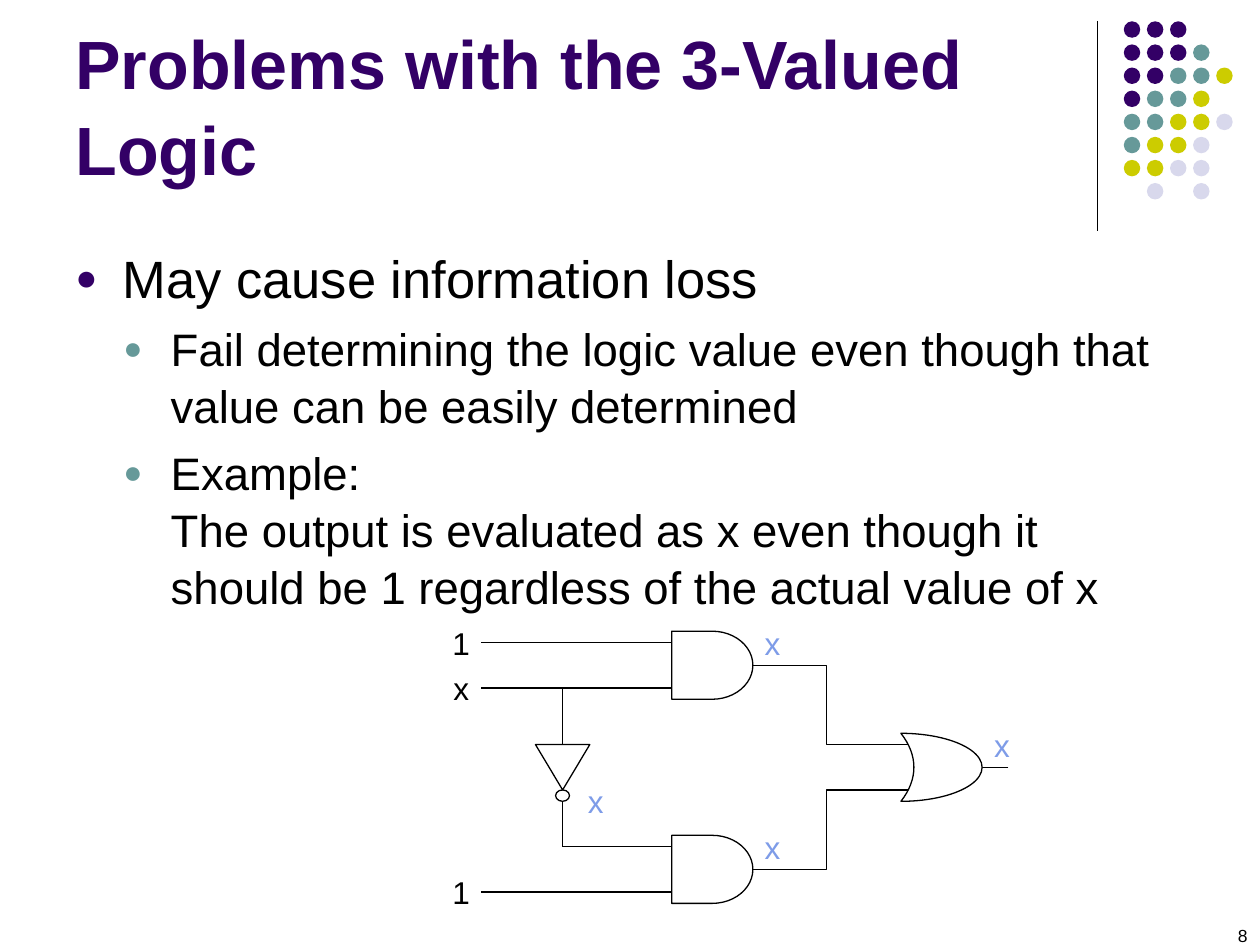
from lxml import etree
from pptx import Presentation
from pptx.dml.color import RGBColor
from pptx.enum import shapes, text
from pptx.oxml import ns
from pptx.util import Pt

deck = Presentation()
deck.slide_width, deck.slide_height = Pt(720), Pt(540)
slide = deck.slides.add_slide(deck.slide_layouts[6])
tree = slide.shapes
kinds = shapes.MSO_SHAPE
links = shapes.MSO_CONNECTOR
INK, PLUM, TEAL, BLUE = "000000", "330066", "669999", "7E9CE8"
hue = RGBColor.from_string


def wire(x1, y1, x2, y2, kind=links.STRAIGHT):
    line = tree.add_connector(kind, Pt(x1), Pt(y1), Pt(x2), Pt(y2))
    line.line.color.rgb = hue(INK)
    line.line.width = Pt(0.75)
    etree.SubElement(line._element.spPr, ns.qn("a:effectLst"))


def solid(kind, x, y, w, h, fill, edge=None, turn=0):
    item = tree.add_shape(kind, Pt(x), Pt(y), Pt(w), Pt(h))
    item.shadow.inherit = False
    item.fill.solid()
    item.fill.fore_color.rgb = hue(fill)
    item.rotation = turn
    if edge:
        item.line.color.rgb = hue(edge)
        item.line.width = Pt(0.75)
    else:
        item.line.fill.background()
    return item


wire(627, 12, 627, 132)
tints = {"P": PLUM, "T": TEAL, "Y": "CCCC00", "L": "D8D8EC"}
dots = ["PPP", "PPPT", "PPTTY", "PTTY", "TTYYL", "TYYL", "YYLL", " L L"]
for row, marks in enumerate(dots):
    for col, mark in enumerate(marks):
        if mark in tints:
            solid(kinds.OVAL, 642.2 + 13.2 * col, 12.2 + 13.2 * row, 9.4, 9.4, tints[mark])

TOP, MID, LOW = text.MSO_ANCHOR.TOP, text.MSO_ANCHOR.MIDDLE, text.MSO_ANCHOR.BOTTOM
LEFT, HUB, RIGHT = text.PP_ALIGN.LEFT, text.PP_ALIGN.CENTER, text.PP_ALIGN.RIGHT
BASE, STEP = 367.2, 12.96
points = [
    ("May cause information loss", 30, PLUM, 27, 0),
    ("Fail determining the logic value even though that value can be easily determined", 26, TEAL, 54.5, 5.2),
    ("Example:\vThe output is evaluated as x even though it should be 1 regardless of the actual value of x",
     26, TEAL, 54.5, 5.2),
]
blocks = [
    ("8", 552, 525, 168, 15, 10, INK, RIGHT, TOP),
    ("Problems with the 3-Valued Logic", 36, 9.4, 594, 102.2, 39, PLUM, LEFT, LOW),
    ("\n".join(p[0] for p in points), 36, 135.4, 648, 347, 30, INK, LEFT, TOP),
]
tags = [("1", 252, -1, INK), ("x", 252, 1, INK), ("1", 252, 10, INK), ("x", 329, 6, BLUE),
        ("x", 430, 8, BLUE), ("x", 561, 3.5, BLUE), ("x", 430, -1, BLUE)]
blocks += [(tag, x, BASE + row * STEP, 23, 2 * STEP, 18, tint, HUB, MID) for tag, x, row, tint in tags]

frames = []
for words, x, y, w, h, size, tint, side, hold in blocks:
    frame = tree.add_textbox(Pt(x), Pt(y), Pt(w), Pt(h)).text_frame
    frame.text = words
    frame.word_wrap = hold != MID
    frame.vertical_anchor = hold
    if hold == MID:
        frame.margin_left = frame.margin_right = 0
    for para in frame.paragraphs:
        para.alignment = side
        if size >= 30:
            para.line_spacing = 1.05
        for run in para.runs:
            run.font.name = "Arial"
            run.font.size = Pt(size)
            run.font.bold = size == 39
            run.font.color.rgb = hue(tint)
    frames.append(frame)

for para, (words, size, tint, dent, gap) in zip(frames[2].paragraphs, points):
    para.level = int(size == 26)
    para.space_before = Pt(gap)
    for run in para.runs:
        run.font.size = Pt(size)
    props = para._p.get_or_add_pPr()
    props.set("marL", str(Pt(dent)))
    props.set("indent", str(-Pt(27)))
    shade = etree.SubElement(props, ns.qn("a:buClr"))
    etree.SubElement(shade, ns.qn("a:srgbClr"), val=tint)
    etree.SubElement(props, ns.qn("a:buSzPct"), val="70000")
    etree.SubElement(props, ns.qn("a:buFont"), typeface="Arial")
    etree.SubElement(props, ns.qn("a:buChar"), char="●")

for x1, row1, x2, row2 in [
    (275, 0, 368, 0), (275, 2, 368, 2), (275, 11, 368, 11), (321.5, 2, 321.5, 4),
    (321.5, 4, 321.5, 7.5), (321.5, 7.5, 321.5, 9), (321.5, 9, 368, 9),
]:
    wire(x1, BASE + row1 * STEP, x2, BASE + row2 * STEP)
for row1, row2 in [(1, 4.5), (10, 6.5)]:
    wire(445, BASE + row1 * STEP, 499.5, BASE + row2 * STEP, links.ELBOW)

solid(kinds.OVAL, 318.2, 450.7, 6.5, 7.9, "FFFFFF", INK, 90)
solid(kinds.ISOSCELES_TRIANGLE, 306, 425.5, 31, 25.9, "FFFFFF", INK, 180)
gates = [(kinds.FLOWCHART_DELAY, 383.8, 1, 0), (kinds.FLOWCHART_DELAY, 383.8, 10, 0), (kinds.MOON, 514.8, 5.5, 180)]
for kind, x, row, turn in gates:
    y = BASE + row * STEP
    for pin in (y - STEP, y + STEP):
        wire(x + 15, pin, x - 15.8, pin)
    wire(x + 61.5, y, x + 30.7, y)
    gate = solid(kind, x, y - 1.5 * STEP, 46.4, 3 * STEP, "FFFFFF", INK, turn)
    if kind == kinds.MOON:
        gate.adjustments[0] = 0.84

deck.save("out.pptx")
